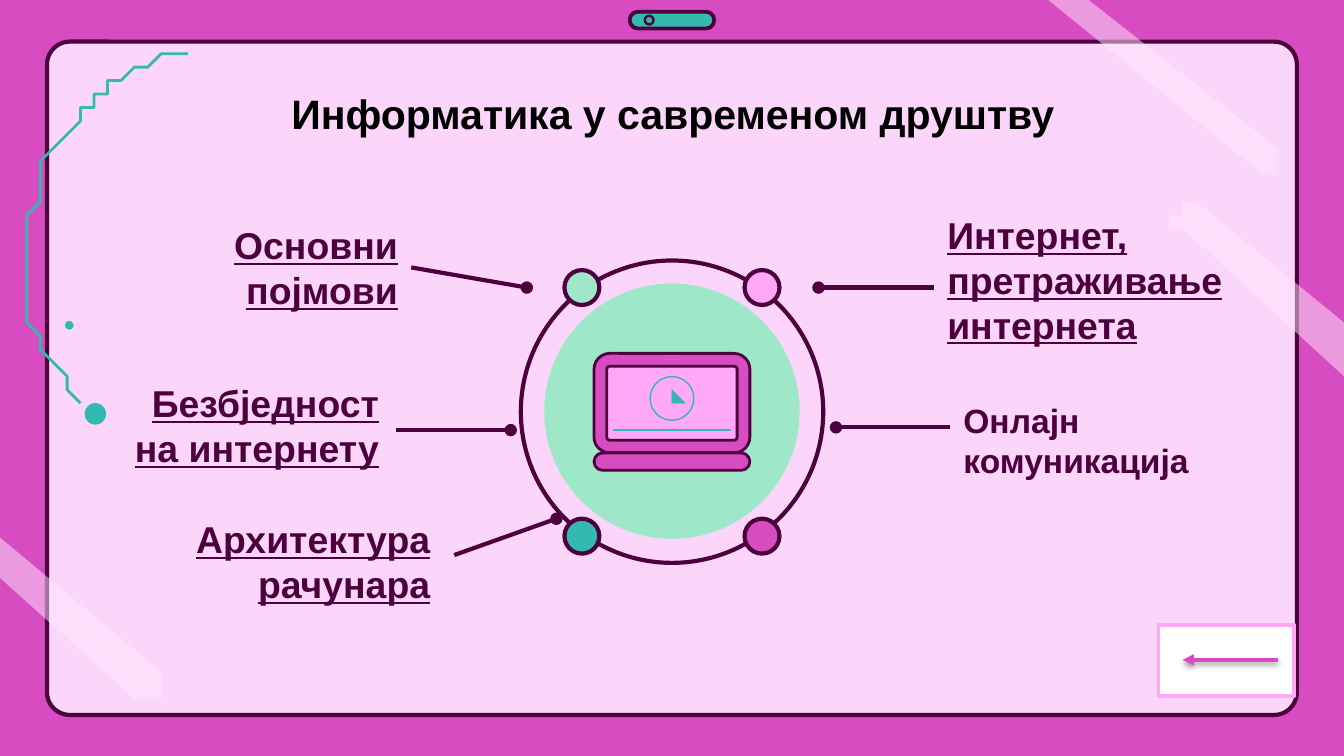
from lxml.etree import SubElement as Sub
from pptx import Presentation as Deck
from pptx.dml.color import RGBColor as Rgb
from pptx.enum.shapes import MSO_CONNECTOR as Conn, MSO_SHAPE as Kind
from pptx.enum.text import MSO_ANCHOR as Anchor, MSO_AUTO_SIZE as Auto, PP_ALIGN as Align
from pptx.oxml.ns import qn
from pptx.util import Inches, Pt

HUES = {
    "pink": "D84CC1", "pale": "FCD5FB", "plum": "4D003E", "teal": "33B9AF",
    "gleam": "FFE9FE", "mint": "9FE7C9", "rose": "FFA8F7",
    "white": "FFFFFF", "black": "000000",
}
COLS, ROWS = 100, 56.25  # square cells, a tenth of an inch


def bend(start, curve, steps=16):
    """Points along a cubic curve given as x1, y1, x2, y2, x3, y3."""
    knots = [start, curve[:2], curve[2:4], curve[4:]]
    for i in range(1, steps + 1):
        t = i / steps
        mix = ((1 - t) ** 3, 3 * t * (1 - t) ** 2, 3 * t * t * (1 - t), t ** 3)
        yield tuple(sum(m * k[axis] for m, k in zip(mix, knots)) for axis in (0, 1))


class Board:
    font = "Arial"
    edge = 2.25

    def __init__(self, deck, back):
        self.cell = deck.slide_width / COLS
        self.slide = deck.slides.add_slide(deck.slide_layouts[6])
        self.items = self.slide.shapes
        self.paint(self.slide.background.fill, back)

    def span(self, *cells):
        return [round(c * self.cell) for c in cells]

    def paint(self, fill, hue):
        if hue:
            fill.solid()
            fill.fore_color.rgb = Rgb.from_string(HUES[hue])
        else:
            fill.background()

    def dress(self, shape, fill, line, width):
        shape.shadow.inherit = False
        self.paint(shape.fill, fill)
        self.paint(shape.line.fill, line)
        if line:
            shape.line.width = Pt(width)
        return shape

    def shape(self, kind, box, fill=None, line=None, width=edge, curve=None):
        item = self.items.add_shape(kind, *self.span(*box))
        if curve is not None:
            item.adjustments[0] = curve
        return self.dress(item, fill, line, width)

    def disc(self, x, y, size, fill=None, line=None, width=edge):
        box = (x - size / 2, y - size / 2, size, size)
        return self.shape(Kind.OVAL, box, fill, line, width)

    def free(self, path, fill=None, line=None, width=edge, close=True, alpha=None):
        """Outline of points; a step of six numbers is a cubic curve."""
        dots = [path[0]]
        for step in path[1:]:
            dots.extend(bend(dots[-1], step) if len(step) == 6 else [step])
        pen = self.items.build_freeform(*dots[0], scale=self.cell)
        pen.add_line_segments(dots[1:], close=close)
        item = self.dress(pen.convert_to_shape(), fill, line, width)
        if alpha:
            tint = item._element.spPr.find(qn("a:solidFill"))[0]
            Sub(tint, qn("a:alpha"), val=str(alpha * 1000))
        return item

    def link(self, x1, y1, x2, y2, hue="plum", width=edge, tip=None, box=None, shade=False):
        wire = self.items.add_connector(Conn.STRAIGHT, *self.span(x1, y1, x2, y2))
        if box is not None:
            wire.begin_connect(box, 3)
        self.paint(wire.line.fill, hue)
        wire.line.width = Pt(width)
        if tip:
            Sub(wire.line._get_or_add_ln(), qn("a:tailEnd"), type=tip)
        glow = Sub(wire._element.spPr, qn("a:effectLst"))
        if shade:
            drop = Sub(glow, qn("a:outerShdw"), blurRad=str(Pt(3.1)), dist=str(Pt(1.6)),
                       dir="5400000", rotWithShape="0")
            tint = Sub(drop, qn("a:srgbClr"), val=HUES["black"])
            Sub(tint, qn("a:alpha"), val="38000")

    def text(self, words, box, size=20, hue="plum", align=Align.LEFT, under=True):
        item = self.items.add_textbox(*self.span(*box))
        frame = item.text_frame
        frame.word_wrap = True
        frame.vertical_anchor = Anchor.MIDDLE
        frame.margin_top = frame.margin_bottom = Inches(0.1)
        para = frame.paragraphs[0]
        para.alignment = align
        run = para.add_run()
        run.text = words
        font = run.font
        font.name, font.size, font.bold = self.font, Pt(size), True
        if under:
            font.underline = True
        font.color.rgb = Rgb.from_string(HUES[hue])
        return item


def scene(board):
    board.shape(Kind.ROUNDED_RECTANGLE, (3.5, 3.1, 93, 50.1), "pale", "plum", curve=0.034)
    board.shape(Kind.ROUNDED_RECTANGLE, (46.85, 0.87, 6.3, 1.26), "teal", "plum", 2, 0.5)
    board.disc(48.3, 1.5, 0.65, None, "plum", 1.25)
    orbit = [(6.35, 30.1), (1.45, 25.7, 0.3, 17.8, 4.15, 11.1), (6.4, 7.2, 10, 4.7, 13.7, 3.6)]
    board.free(orbit, line="teal", width=1.5, close=False)
    board.disc(5.15, 24.2, 0.65, "teal")
    board.disc(7.1, 30.8, 1.6, "teal")
    gleams = [
        [(78, 0), (93.5, 13), (93.8, 13.2, 94.1, 13.2, 94.3, 13.2),
         (94.6, 13.2, 95, 13.1, 95.1, 12.8), (95.6, 12.5, 95.5, 11.7, 95.1, 11.4), (81.4, 0)],
        [(11.1, 51.8), (11.5, 51.8, 11.7, 51.7, 12, 51.4), (12.4, 51.1, 12.4, 50.3, 11.9, 49.9),
         (-0.1, 39.9), (-0.1, 42.8), (10.4, 51.5), (10.5, 51.7, 10.8, 51.8, 11.1, 51.8)],
        [(88.6, 15.1), (88.2, 15.1, 87.9, 15.3, 87.6, 15.5), (87.2, 15.9, 87.2, 16.7, 87.8, 17.1),
         (100.3, 27.5), (100.3, 24.5), (89.3, 15.4), (89.1, 15.3, 88.9, 15.1, 88.6, 15.1)],
    ]
    for gleam in gleams:
        board.free(gleam, "gleam", alpha=50)


def laptop(board):
    board.disc(50, 30.6, 19, "mint")
    board.disc(50, 30.63, 22.5, None, "plum")
    board.shape(Kind.ROUNDED_RECTANGLE, (44.2, 26.3, 11.6, 7.4), "pink", "plum", 1.5, 0.16)
    board.shape(Kind.ROUNDED_RECTANGLE, (45.15, 27.25, 9.7, 5.5), "rose", "plum", 1.5, 0.04)
    board.disc(50, 29.65, 3.25, None, "teal", 0.75)
    board.free([(49.8, 28.9), (49.8, 30.4), (50.7, 29.65)], "teal", "teal", 0.23)
    board.link(45.6, 32, 54.4, 32, "teal", 0.75)
    board.link(49.5, 26.7, 50.5, 26.7, "teal", 0.25)
    board.shape(Kind.ROUNDED_RECTANGLE, (44.2, 33.7, 11.6, 1.3), "pink", "plum", 1.5, 0.5)


def topics(board):
    right = Align.RIGHT
    board.text("Интернет, претраживање интернета", (69.5, 16.4, 22.7, 8.8))
    basics = board.text("Основни појмови", (7.9, 16.4, 22.7, 7), align=right)
    board.text("Онлајн комуникација", (70.7, 30, 22.7, 5.5), 18, under=False)
    board.text("Безбједност на интернету", (6.5, 28.9, 22.7, 5.5), align=right)
    board.text("Архитектура рачунара", (10.3, 39, 22.7, 5.5), align=right)

    nodes = iter(("mint", "rose", "teal", "pink"))
    for y in (21.4, 39.9):
        for x in (43.3, 56.7):
            board.disc(x, y, 2.6, next(nodes), "plum")

    board.link(30.6, 19.9, 39.2, 21.4, tip="oval", box=basics)
    for ends in ((69.5, 21.4, 60.9, 21.4), (29.5, 32, 38, 32),
                 (70.7, 31.8, 62.2, 31.8), (33.8, 41.3, 41.4, 38.6)):
        board.link(*ends, tip="oval")


def main():
    deck = Deck()
    deck.slide_width, deck.slide_height = Inches(COLS / 10), Inches(ROWS / 10)
    board = Board(deck, "pink")
    scene(board)
    laptop(board)
    topics(board)
    board.shape(Kind.RECTANGLE, (86.2, 46.5, 10.1, 5.3), "white", "rose", 2)
    board.link(95.1, 49.1, 88, 49.1, "pink", 2, "triangle", shade=True)
    title = board.text("Информатика у савременом друштву", (20.7, 6.1, 61.2, 4.7),
                       22, "black", under=False).text_frame
    title.margin_top = title.margin_bottom = Inches(0.05)
    title.vertical_anchor = Anchor.TOP
    title.auto_size = Auto.SHAPE_TO_FIT_TEXT
    deck.save("out.pptx")


if __name__ == "__main__":
    main()
